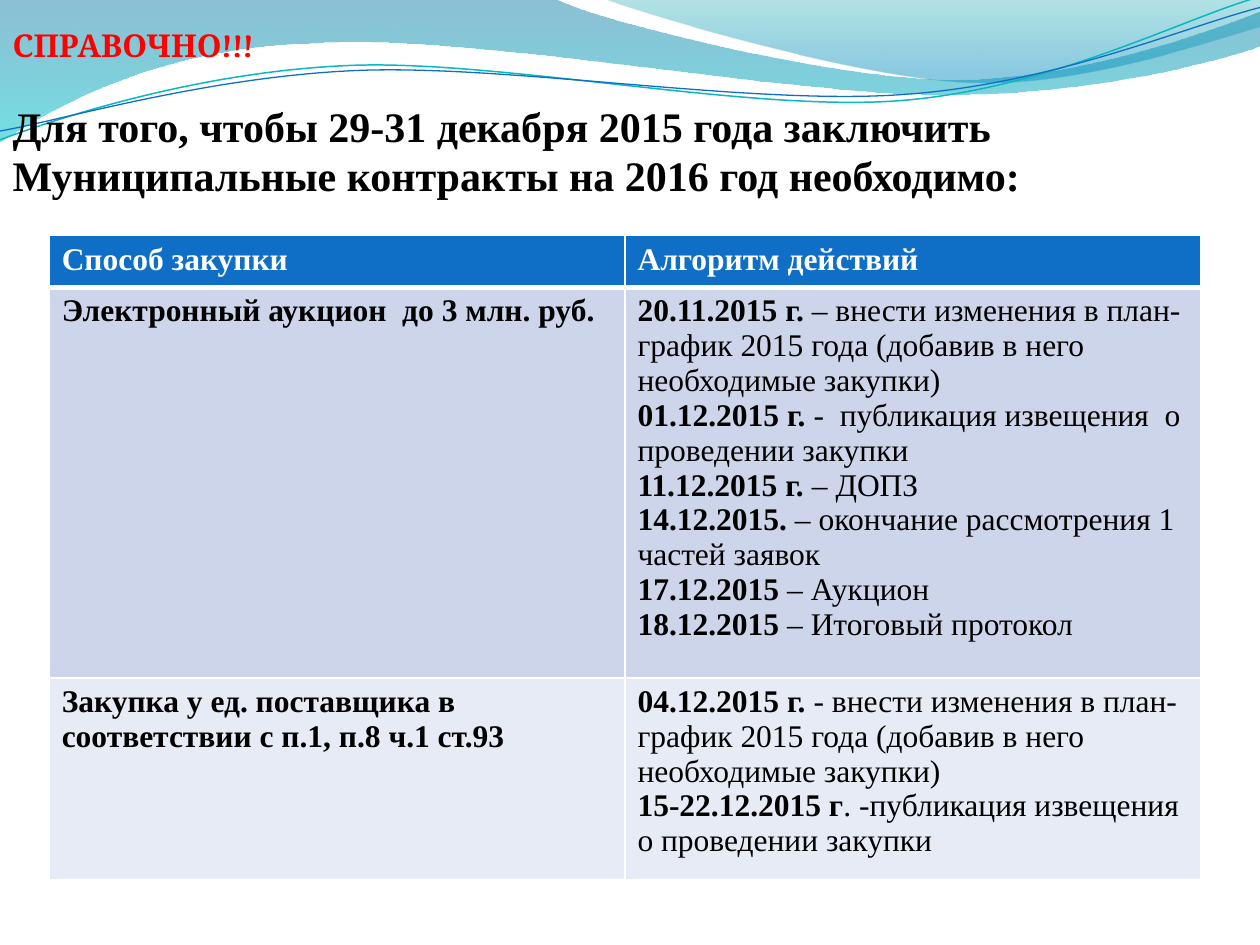
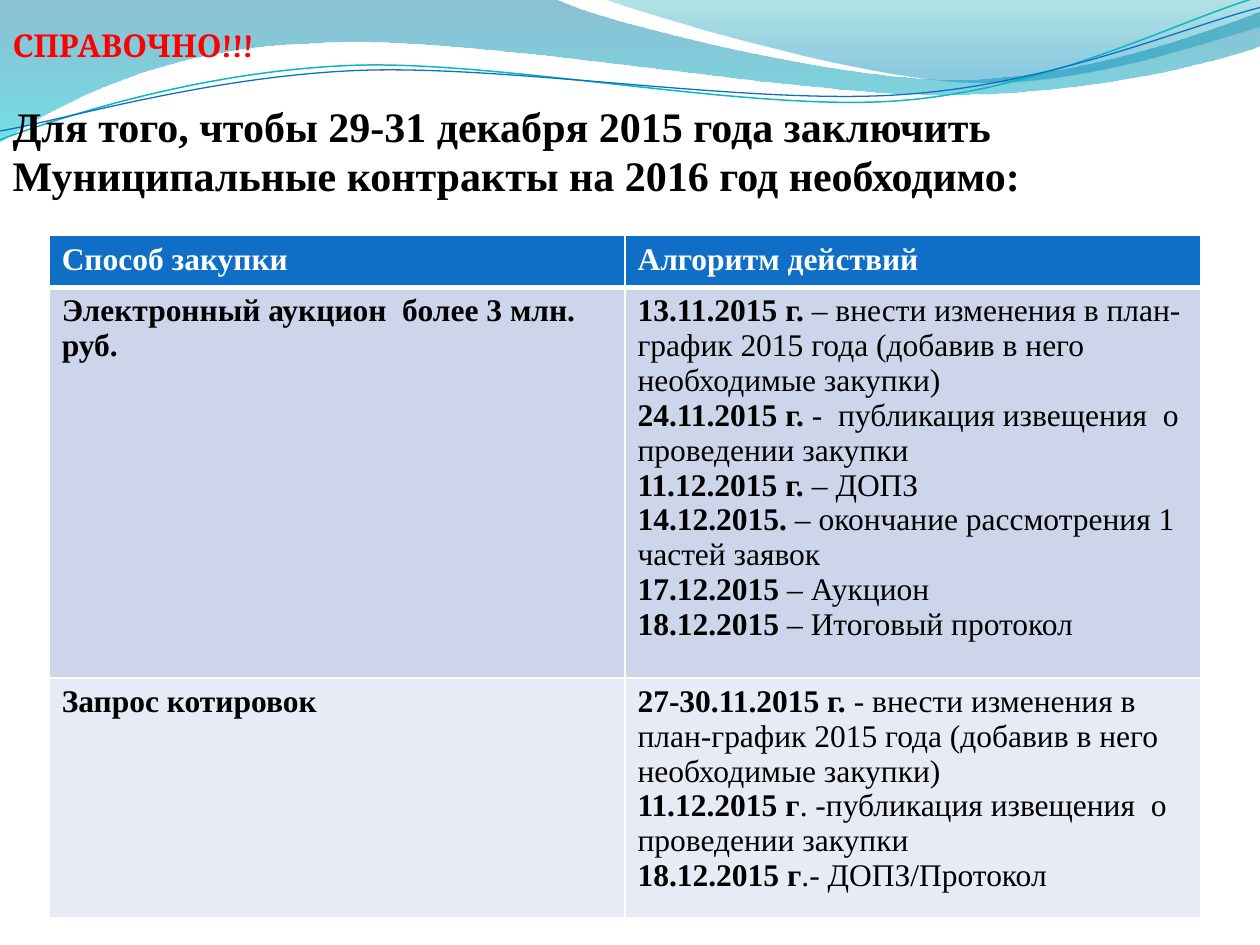
from dataclasses import dataclass
from itertools import chain
from math import cos, radians, sin
from typing import Optional

from lxml.etree import SubElement
from pptx import Presentation
from pptx.dml.color import RGBColor
from pptx.enum.text import MSO_ANCHOR, MSO_AUTO_SIZE, PP_ALIGN
from pptx.oxml.ns import qn
from pptx.util import Inches, Pt

# The page is a grid of 10 columns and 7.5 rows of square cells.
CELL = Inches(1)
COLUMNS, ROWS = 10, 7.5

COLORS = {
    "alert": "FF0000", "text": "000000", "white": "FFFFFF",
    "header": "0F6FC6", "dark band": "CCD5EA", "light band": "E7EBF5",
    "deep blue": "0074A1", "cyan": "00C6CF", "teal": "00A1A9",
    "sky": "008BBF", "turquoise line": "0AB8BF", "blue line": "0F6FC6",
}
SERIF, HEADING_FONT = "Times New Roman", "Cambria"
LINE_TILT = -2.7
Point = tuple[float, float]


@dataclass(frozen=True)
class Stop:
    position: float
    color: str
    opacity: int


@dataclass(frozen=True)
class Wave:
    """Segments hold one point for a straight line and three for a curve."""
    start: Point
    segments: tuple[tuple[Point, ...], ...]
    stops: tuple[Stop, ...] = ()
    line: Optional[str] = None
    line_width: float = 0
    tilt: float = 0


@dataclass(frozen=True)
class Step:
    date: str
    action: str


@dataclass(frozen=True)
class Purchase:
    method: str
    steps: tuple[Step, ...]
    height: float


WAVES = (
    Wave((0, 0), (
        ((4.4, -0.01),),
        ((4.76, 0.17), (6.64, 0.63), (7.58, 0.63)),
        ((8.53, 0.63), (9.58, 0.26), (10, 0.09)),
        ((10.01, 0.36),),
        ((9.83, 0.44), (8.7, 0.76), (7.46, 0.75)),
        ((6.22, 0.75), (3.82, 0.28), (2.57, 0.34)),
        ((1.29, 0.36), (0.46, 0.83), (-0.01, 1.13)),
        ((0, 0),),
    ), stops=(Stop(0, "deep blue", 45), Stop(1, "cyan", 55))),
    Wave((4.79, -0.01), (
        ((5.09, 0.11), (6.82, 0.62), (7.69, 0.65)),
        ((8.56, 0.69), (9.61, 0.32), (10, 0.21)),
        ((10, 0),),
        ((4.79, -0.01),),
    ), stops=(Stop(0, "teal", 30), Stop(0.8, "sky", 45))),
    Wave((0, 1.11), (
        ((0.48, 0.93), (1.58, 0.57), (2.77, 0.52)),
        ((3.95, 0.47), (5.93, 0.89), (7.13, 0.8)),
        ((8.33, 0.71), (9.38, 0.15), (9.98, -0.02)),
    ), line="turquoise line", line_width=0.85, tilt=LINE_TILT),
    Wave((0, 1.04), (
        ((0.47, 0.96), (1.64, 0.61), (2.83, 0.56)),
        ((4.03, 0.51), (5.97, 0.84), (7.17, 0.75)),
        ((8.36, 0.67), (9.41, 0.21), (10, 0.06)),
    ), line="blue line", line_width=0.75, tilt=LINE_TILT),
)

HEADING = "СПРАВОЧНО!!!"
QUESTION = ("Для того, чтобы 29-31 декабря 2015 года заключить "
            "Муниципальные контракты на 2016 год необходимо:")
TABLE_HEADER = ("Способ закупки", "Алгоритм действий")
HEADER_HEIGHT = 0.41
CHANGE_PLAN = "внести изменения в план-график 2015 года (добавив в него необходимые закупки)"
PUBLISH = "публикация извещения  о проведении закупки"


def auction(limit: str, plan_date: str, notice_date: str) -> Purchase:
    return Purchase(f"Электронный аукцион  {limit} 3 млн. руб.", (
        Step(f"{plan_date} г. ", f"– {CHANGE_PLAN}"),
        Step(f"{notice_date} г.", f" -  {PUBLISH}"),
        Step("11.12.2015 г.", " – ДОПЗ"),
        Step("14.12.2015.", " – окончание рассмотрения 1 частей заявок"),
        Step("17.12.2015", " – Аукцион"),
        Step("18.12.2015", " – Итоговый протокол"),
    ), 3.1)


PAGES = (
    (
        auction("до", "20.11.2015", "01.12.2015"),
        Purchase("Закупка у ед. поставщика в соответствии с п.1, п.8 ч.1 ст.93", (
            Step("04.12.2015 г.", f" - {CHANGE_PLAN}"),
            Step("15-22.12.2015 г", f". -{PUBLISH}"),
        ), 1.6),
    ),
    (
        auction("более", "13.11.2015", "24.11.2015"),
        Purchase("Запрос котировок", (
            Step("27-30.11.2015 г.", f" - {CHANGE_PLAN}"),
            Step("11.12.2015 г", f". -{PUBLISH}"),
            Step("18.12.2015 г", ".- ДОПЗ/Протокол"),
        ), 1.9),
    ),
)


def rgb(name: str) -> RGBColor:
    return RGBColor.from_string(COLORS[name])


def cells(count: float) -> int:
    return round(count * CELL)


def style(paragraph, color: str, size: float = 18, name: str = SERIF, bold: bool = True) -> None:
    font = paragraph.font
    font.name, font.size, font.bold = name, Pt(size), bold
    font.color.rgb = rgb(color)


def rotate(point: Point, degrees: float) -> Point:
    x, y = point
    angle = radians(degrees)
    return x * cos(angle) - y * sin(angle), x * sin(angle) + y * cos(angle)


def level(points: list[Point], tilt: float) -> list[Point]:
    """Undo a tilt, so that turning the finished shape about its centre restores the points."""
    turned = [rotate(point, -tilt) for point in points]
    centre = tuple((min(axis) + max(axis)) / 2 for axis in zip(*turned))
    target = rotate(centre, tilt)
    return [(x + target[0] - centre[0], y + target[1] - centre[1]) for x, y in turned]


def bend(shape, segments: tuple[tuple[Point, ...], ...]) -> None:
    """Join the three straight lines of each curved segment into one Bézier curve."""
    lines = iter(list(shape.element.iter(qn("a:lnTo"))))
    for segment in segments:
        parts = [next(lines) for _ in segment]
        if len(parts) == 1:
            continue
        outline = parts[0].getparent()
        curve = SubElement(outline, qn("a:cubicBezTo"))
        parts[0].addprevious(curve)
        for part in parts:
            curve.append(part[0])
            outline.remove(part)


def fill_gradient(shape, stops: tuple[Stop, ...]) -> None:
    shape.fill.gradient()
    shape.fill.gradient_angle = 270
    for target, stop in zip(shape.fill.gradient_stops, stops):
        target.color.rgb = rgb(stop.color)
        target.position = stop.position
    for color, stop in zip(shape.element.iter(qn("a:srgbClr")), stops):
        SubElement(color, qn("a:alpha"), val=str(stop.opacity * 1000))


def draw_wave(page, layout, wave: Wave) -> None:
    """Build a wave on the page and move it to the layout all pages share."""
    points = level([wave.start, *chain.from_iterable(wave.segments)], wave.tilt)
    start, *rest = [(cells(x), cells(y)) for x, y in points]
    builder = page.shapes.build_freeform(*start)
    builder.add_line_segments(rest, close=bool(wave.stops))
    shape = builder.convert_to_shape()
    bend(shape, wave.segments)
    shape.rotation = wave.tilt
    shape.shadow.inherit = False
    if wave.stops:
        fill_gradient(shape, wave.stops)
        shape.line.fill.background()
    else:
        shape.fill.background()
        shape.line.color.rgb = rgb(wave.line)
        shape.line.width = Pt(wave.line_width)
    layout.shapes.element.append(shape.element)


def write_title(page) -> None:
    title = page.shapes.title
    title.left, title.top, title.width, title.height = map(cells, (0, 0.16, 9.77, 2.83))
    frame = title.text_frame
    frame.word_wrap = True
    frame.auto_size = MSO_AUTO_SIZE.NONE
    frame.vertical_anchor = MSO_ANCHOR.TOP
    heading, question = frame.paragraphs[0], frame.add_paragraph()
    heading.text, question.text = HEADING, QUESTION
    heading.alignment = question.alignment = PP_ALIGN.LEFT
    style(heading, "alert", name=HEADING_FONT)
    style(question, "text", size=24)
    question.space_before = Pt(22)
    question.line_spacing = 0.98


def format_cell(cell, fill: str, top: float = 1, bottom: float = 1) -> None:
    properties = cell._tc.get_or_add_tcPr()
    for side, width in (("L", 1), ("R", 1), ("T", top), ("B", bottom)):
        border = SubElement(properties, qn(f"a:ln{side}"), w=str(Pt(width)))
        solid = SubElement(border, qn("a:solidFill"))
        SubElement(solid, qn("a:srgbClr"), val=COLORS["white"])
    cell.fill.solid()
    cell.fill.fore_color.rgb = rgb(fill)


def write_cell(cell, text: str, color: str) -> None:
    cell.text = text
    style(cell.text_frame.paragraphs[0], color)


def write_steps(cell, steps: tuple[Step, ...]) -> None:
    frame = cell.text_frame
    for index, step in enumerate(steps):
        paragraph = frame.add_paragraph() if index else frame.paragraphs[0]
        style(paragraph, "text", bold=False)
        for text, bold in ((step.date, True), (step.action, False)):
            span = paragraph.add_run()
            span.text, span.font.bold = text, bold


def draw_table(page, purchases: tuple[Purchase, ...]) -> None:
    heights = [HEADER_HEIGHT, *(purchase.height for purchase in purchases)]
    frame = page.shapes.add_table(len(heights), len(TABLE_HEADER),
                                  *map(cells, (0.39, 1.87, 9.14, sum(heights))))
    table = frame.table
    for row, height in zip(table.rows, heights):
        row.height = cells(height)
    for column, text in enumerate(TABLE_HEADER):
        cell = table.cell(0, column)
        format_cell(cell, "header", bottom=3)
        write_cell(cell, text, "white")
    bands = ("dark band", "light band")
    for index, (purchase, band) in enumerate(zip(purchases, bands), start=1):
        method, steps = table.rows[index].cells
        for cell in (method, steps):
            format_cell(cell, band, top=3 if index == 1 else 1)
        write_cell(method, purchase.method, "text")
        write_steps(steps, purchase.steps)


def main() -> None:
    deck = Presentation()
    deck.slide_width, deck.slide_height = cells(COLUMNS), cells(ROWS)
    layout = deck.slide_layouts.get_by_name("Title Only")
    pages = [deck.slides.add_slide(layout) for _ in PAGES]
    for wave in WAVES:
        draw_wave(pages[0], layout, wave)
    for page, purchases in zip(pages, PAGES):
        write_title(page)
        draw_table(page, purchases)
    deck.save("out.pptx")


if __name__ == "__main__":
    main()
